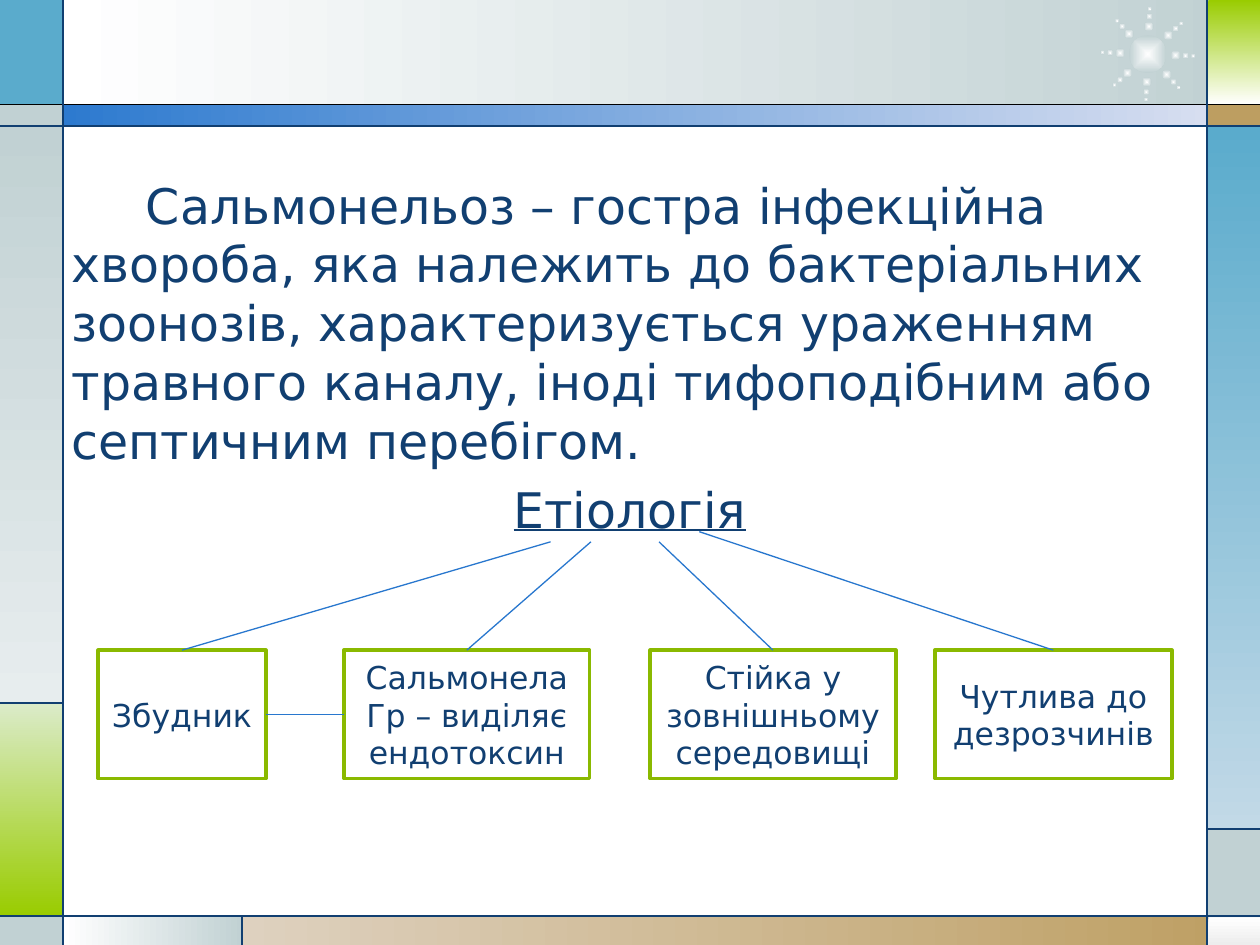
from dataclasses import dataclass
from itertools import product
from math import cos, pi, sin
from typing import Optional

from lxml.etree import SubElement
from pptx import Presentation
from pptx.dml.color import RGBColor
from pptx.enum.shapes import MSO_CONNECTOR, MSO_SHAPE
from pptx.enum.text import MSO_ANCHOR, PP_ALIGN
from pptx.oxml import parse_xml
from pptx.oxml.ns import nsdecls, qn
from pptx.util import Inches, Pt

WHITE = RGBColor(0xFF, 0xFF, 0xFF)
PALE = RGBColor(0xED, 0xED, 0xED)
GREY = RGBColor(0xC1, 0xD1, 0xD3)
LIGHT_GREY = RGBColor(0xE7, 0xED, 0xEE)
SKY = RGBColor(0x5A, 0xAB, 0xCC)
LIGHT_SKY = RGBColor(0xC2, 0xD9, 0xE7)
LIME = RGBColor(0x99, 0xCC, 0x00)
LIGHT_LIME = RGBColor(0xDB, 0xEB, 0xC9)
TAN = RGBColor(0xBD, 0x9E, 0x61)
LIGHT_TAN = RGBColor(0xDE, 0xD1, 0xBF)
BLUE = RGBColor(0x2D, 0x7A, 0xCF)
LIGHT_BLUE = RGBColor(0xD7, 0xDE, 0xF0)
NAVY = RGBColor(0x11, 0x3F, 0x71)
LINK = RGBColor(0x28, 0x77, 0xCE)
GREEN = RGBColor(0x8A, 0xB9, 0x00)
BLACK = RGBColor(0, 0, 0)

RIGHT, DOWN = 0, 270  # gradient directions, counter-clockwise degrees

prs = Presentation()
prs.slide_width, prs.slide_height = Inches(10), Inches(7.5)
s = prs.slides.add_slide(prs.slide_layouts[6])

# The grid has 100 columns and 75 rows
COL = prs.slide_width / 100
ROW = prs.slide_height / 75


@dataclass
class Panel:
    x: float
    y: float
    w: float
    h: float
    color: RGBColor
    end: Optional[RGBColor] = None
    angle: int = RIGHT


@dataclass
class Box:
    x: float
    w: float
    text: str
    start: tuple  # where its link leaves the heading


def grid(x: float, y: float) -> tuple:
    return round(x * COL), round(y * ROW)


def add_block(kind: MSO_SHAPE, x: float, y: float, w: float, h: float):
    sp = s.shapes.add_shape(kind, *grid(x, y), *grid(w, h))
    sp.shadow.inherit = False
    sp.line.fill.background()
    return sp


def fill_gradient(sp, start: RGBColor, end: RGBColor, angle: int) -> None:
    sp.fill.gradient()
    sp.fill.gradient_angle = angle
    for stop, color, position in zip(sp.fill.gradient_stops, (start, end), (0, 1)):
        stop.color.rgb = color
        stop.position = position


def add_panel(panel: Panel) -> None:
    sp = add_block(MSO_SHAPE.RECTANGLE, panel.x, panel.y, panel.w, panel.h)
    if panel.end is None:
        sp.fill.solid()
        sp.fill.fore_color.rgb = panel.color
    else:
        fill_gradient(sp, panel.color, panel.end, panel.angle)


def add_dot(cx: float, cy: float, size: float) -> None:
    sp = add_block(MSO_SHAPE.OVAL, cx - size / 2, cy - size / 2, size, size)
    fill_gradient(sp, WHITE, GREY, RIGHT)
    lin = sp.fill._xPr.find(qn("a:gradFill")).find(qn("a:lin"))
    lin.getparent().replace(lin, parse_xml(
        f'<a:path {nsdecls("a")} path="shape">'
        '<a:fillToRect l="50000" t="50000" r="50000" b="50000"/></a:path>'))


def add_line(start: tuple, end: tuple, color: RGBColor):
    line = s.shapes.add_connector(MSO_CONNECTOR.STRAIGHT, *grid(*start), *grid(*end))
    line.line.color.rgb = color
    line.line.width = Pt(0.75)
    SubElement(line._element.spPr, qn("a:effectLst"))
    return line


def add_run(p, text: str, **extra) -> None:
    r = p.add_run()
    r.text = text
    r.font.color.rgb = NAVY
    for name, value in {"name": "DejaVu Sans", **extra}.items():
        setattr(r.font, name, value)


def add_box(box: Box):
    sp = add_block(MSO_SHAPE.RECTANGLE, box.x, 51.6, box.w, 10.2)
    sp.fill.solid()
    sp.fill.fore_color.rgb = WHITE
    sp.line.color.rgb = GREEN
    sp.line.width = Pt(2)
    tf = sp.text_frame
    for name, value in {"word_wrap": True, "vertical_anchor": MSO_ANCHOR.MIDDLE}.items():
        setattr(tf, name, value)
    p = tf.paragraphs[0]
    p.alignment = PP_ALIGN.CENTER
    add_run(p, box.text, size=Pt(18))
    return sp


# Frame of coloured panels
PANELS = [
    Panel(5, 0, 92.7, 8.4, WHITE, GREY),
    Panel(0, 0, 5, 8.4, SKY),
    Panel(0, 8.3, 5, 1.7, GREY),
    Panel(0, 10, 5, 45.8, GREY, LIGHT_GREY, DOWN),
    Panel(0, 55.8, 5, 16.9, LIGHT_LIME, LIME, DOWN),
    Panel(0, 72.7, 5, 2.3, GREY),
    Panel(5, 72.7, 14.3, 2.3, WHITE, GREY),
    Panel(19.2, 72.7, 80.8, 2.3, LIGHT_TAN, TAN),
    Panel(95.9, 72.7, 4.1, 2.3, WHITE, PALE, DOWN),
    Panel(95.8, 65.8, 4.2, 7, GREY),
    Panel(95.8, 10, 4.2, 55.8, SKY, LIGHT_SKY, DOWN),
    Panel(95.8, 8.3, 4.2, 1.7, TAN),
    Panel(95.9, 0, 4.1, 8.3, LIME, WHITE, DOWN),
    Panel(5, 8.3, 90.9, 1.7, BLUE, LIGHT_BLUE),
]
for panel in PANELS:
    add_panel(panel)

# Sunburst: a core and eight rays of three shrinking dots
SUN_X, SUN_Y = 91.1, 4.3
add_dot(SUN_X, SUN_Y, 3)
for ray, (radius, size) in product(range(8), [(2.2, 0.75), (3, 0.5), (3.6, 0.35)]):
    angle = ray * pi / 4 + 0.04
    add_dot(SUN_X + radius * cos(angle), SUN_Y + radius * sin(angle), size)

# Rules between the panels
RULES = [
    ((0, 8.3), (100, 8.3), BLACK),
    ((0, 10), (100, 10), NAVY),
    ((0, 72.7), (100, 72.7), NAVY),
    ((5, 0), (5, 75), NAVY),
    ((95.8, 0), (95.8, 75), NAVY),
    ((0, 55.8), (5, 55.8), NAVY),
    ((19.2, 72.7), (19.2, 75), NAVY),
    ((95.8, 65.8), (100, 65.8), NAVY),
]
for rule in RULES:
    add_line(*rule)

# Definition and heading
tf = s.shapes.add_textbox(*grid(4.7, 13.4), *grid(90.6, 53.8)).text_frame
tf.word_wrap = True
definition, heading = tf.paragraphs[0], tf.add_paragraph()
definition._p.get_or_add_pPr().set("indent", str(Inches(0.59)))
heading.alignment = PP_ALIGN.CENTER
for p in (definition, heading):
    p.space_before = Pt(5.6)
add_run(definition, "Сальмонельоз – гостра інфекційна хвороба, яка належить до "
        "бактеріальних зоонозів, характеризується ураженням травного каналу, "
        "іноді тифоподібним або септичним перебігом.", size=Pt(28))
add_run(heading, "Етіологія", size=Pt(28), underline=True)

# Boxes and their links to the heading
BOXES = [
    Box(7.8, 13.3, "Збудник", (43.7, 43)),
    Box(27.3, 19.5, "Сальмонела Гр – виділяє ендотоксин", (46.9, 43)),
    Box(51.6, 19.5, "Стійка у зовнішньому середовищі", (52.3, 43)),
    Box(74.2, 18.8, "Чутлива до дезрозчинів", (55.5, 42.2)),
]
shapes = [add_box(box) for box in BOXES]
for box, sp in zip(BOXES, shapes):
    add_line(box.start, (box.x + box.w / 2, 51.6), LINK).end_connect(sp, 0)
link = add_line((21.1, 56.7), (27.3, 56.7), LINK)
link.begin_connect(shapes[0], 3)
link.end_connect(shapes[1], 1)

prs.save("out.pptx")
